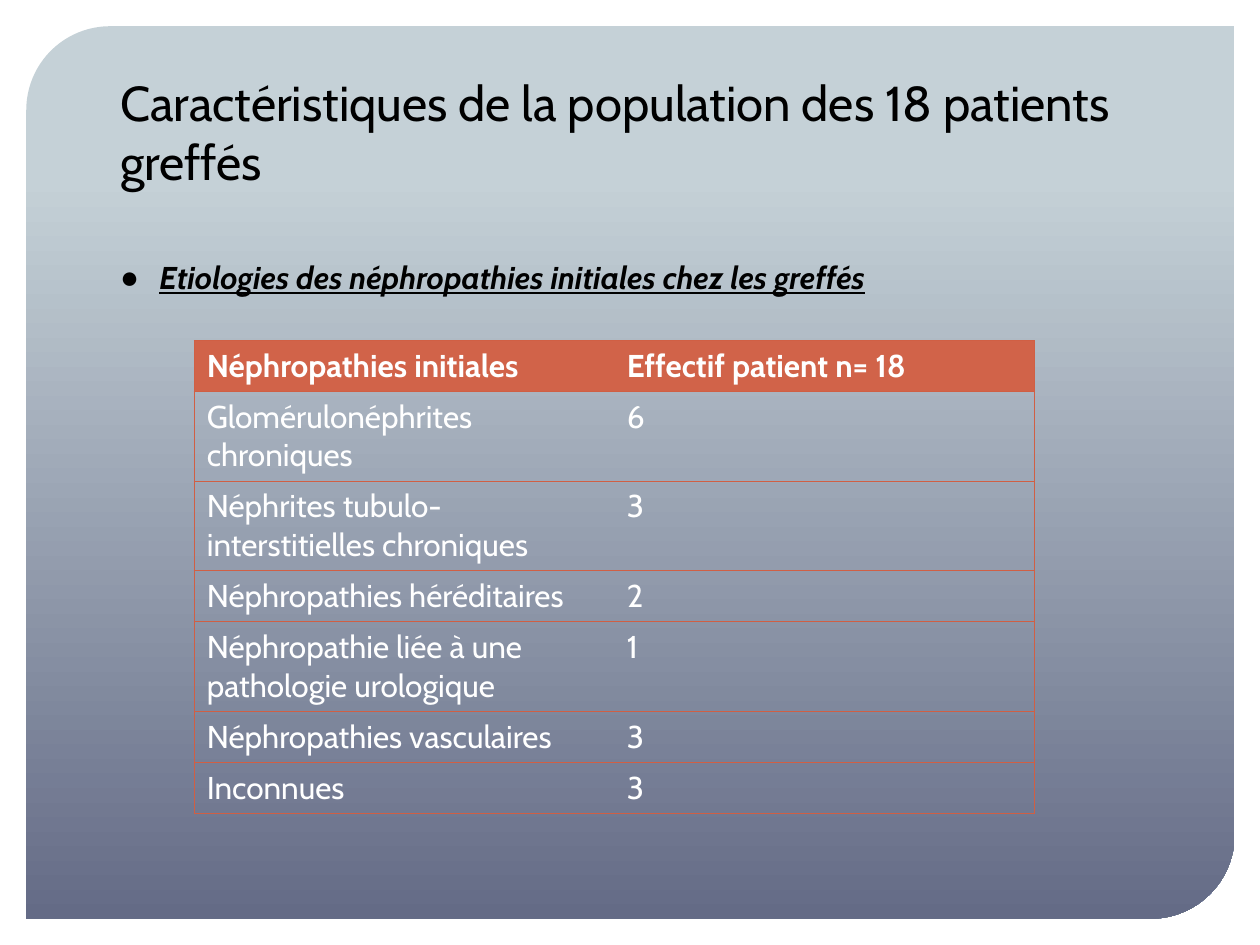
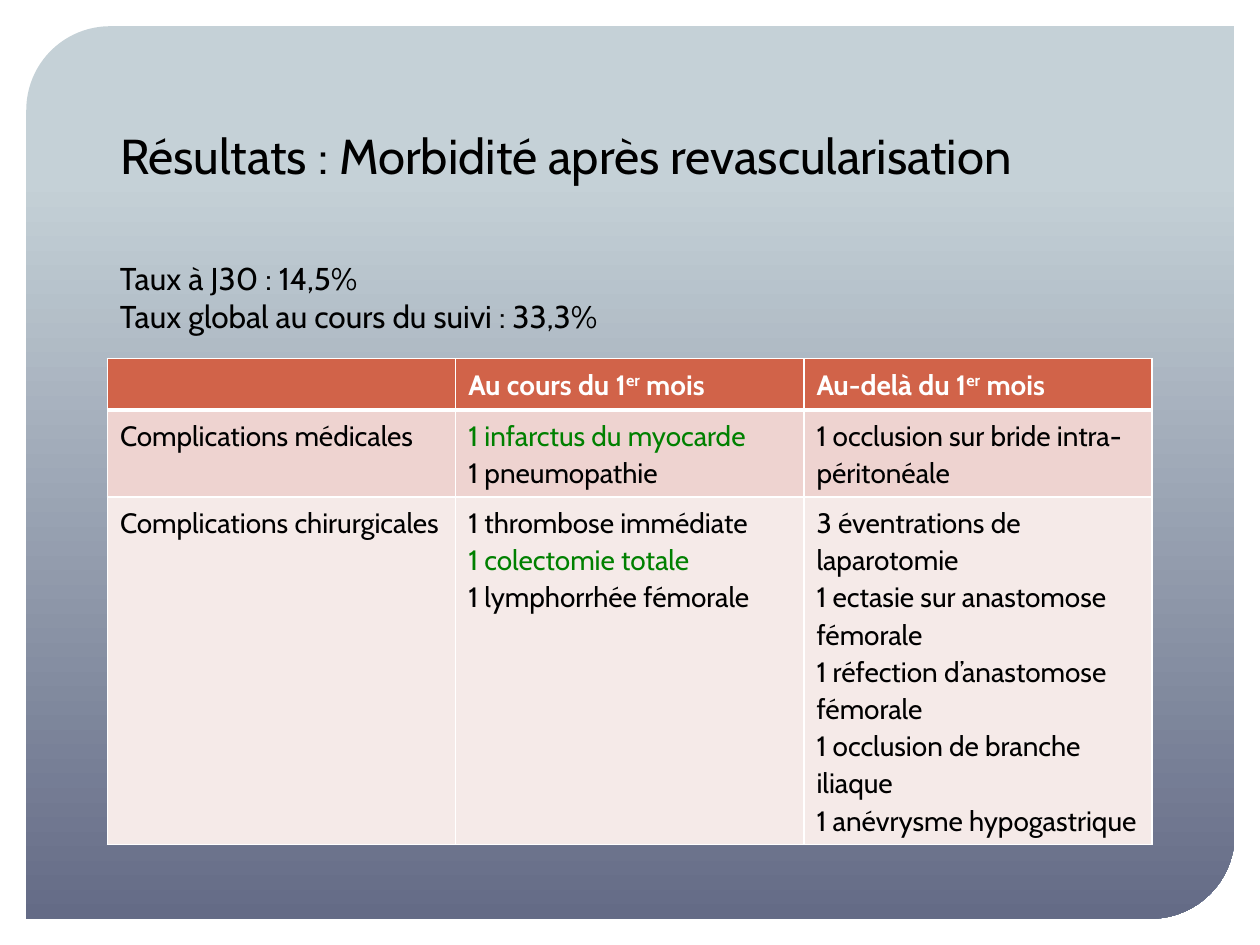
from lxml import etree
from pptx import Presentation
from pptx.dml.color import RGBColor
from pptx.enum import shapes, text
from pptx.oxml import ns
from pptx.util import Pt

FONT = "Cabin"
BLACK, WHITE, GREEN = "000000", "FFFFFF", "008000"
SKY, DUSK = "C5D1D7", "646B86"
RUST, RUST_LINE = "D16349", "D05F44"
ROSE, PALE_ROSE = "EED3D0", "F5EAE8"
LEFT, WIDTH = 61.4, 597
ROW_HEIGHT = 29.2

NEPHROPATHIES = [
    ("Néphropathies initiales", "Effectif patient n= 18"),
    ("Glomérulonéphrites chroniques", "6"),
    ("Néphrites tubulo-interstitielles chroniques", "3"),
    ("Néphropathies héréditaires", "2"),
    ("Néphropathie liée à une pathologie urologique", "1"),
    ("Néphropathies vasculaires", "3"),
    ("Inconnues", "3"),
]

PERIODS = [(), ("Au cours du 1", "er", " mois"), ("Au-delà du 1", "er", " mois")]
COMPLICATIONS = [
    (
        ["Complications médicales"],
        ["1 infarctus du myocarde", "1 pneumopathie"],
        ["1 occlusion sur bride intra-péritonéale"],
    ),
    (
        ["Complications chirurgicales"],
        ["1 thrombose immédiate", "1 colectomie totale", "1 lymphorrhée fémorale"],
        [
            "3 éventrations de laparotomie",
            "1 ectasie sur anastomose fémorale",
            "1 réfection d’anastomose fémorale",
            "1 occlusion de branche iliaque",
            "1 anévrysme hypogastrique",
        ],
    ),
]
HIGHLIGHTED = {"1 infarctus du myocarde", "1 colectomie totale"}


def colour(value):
    return RGBColor.from_string(value)


def place(shape, left, top, width, height):
    shape.left, shape.top = Pt(left), Pt(top)
    shape.width, shape.height = Pt(width), Pt(height)


def add_run(paragraph, words, size, ink=BLACK, bold=False):
    run = paragraph.add_run()
    run.text = words
    run.font.name = FONT
    run.font.size = Pt(size)
    run.font.bold = bold
    run.font.color.rgb = colour(ink)
    return run


def paragraphs_for(frame, count):
    """Give the frame's first paragraph, then new ones, up to count."""
    yield frame.paragraphs[0]
    for _ in range(count - 1):
        yield frame.add_paragraph()


def add_panel(slide):
    """Put the rounded gradient panel behind everything on the slide."""
    panel = slide.shapes.add_shape(
        shapes.MSO_SHAPE.ROUND_2_DIAG_RECTANGLE, Pt(15), Pt(15), Pt(690.5), Pt(510))
    panel.shadow.inherit = False
    panel.adjustments[0], panel.adjustments[1] = 0.094, 0
    panel.line.fill.background()
    panel.fill.gradient()
    panel.fill.gradient_angle = 270
    for stop, position, tint in zip(panel.fill.gradient_stops, (0.17, 1), (SKY, DUSK)):
        stop.position = position
        stop.color.rgb = colour(tint)
    slide.shapes.element.insert(2, panel.element)


def set_title(slide, words, top):
    title = slide.shapes.title
    place(title, LEFT, top, WIDTH, 82)
    title.text_frame.auto_size = text.MSO_AUTO_SIZE.NONE
    title.text_frame.vertical_anchor = text.MSO_ANCHOR.BOTTOM
    paragraph = title.text_frame.paragraphs[0]
    paragraph.alignment = text.PP_ALIGN.LEFT
    add_run(paragraph, words, 28)


def set_bullet_heading(body, words):
    place(body, LEFT, 144, WIDTH, 331.2)
    body.text_frame.auto_size = text.MSO_AUTO_SIZE.NONE
    paragraph = body.text_frame.paragraphs[0]
    properties = paragraph._p.get_or_add_pPr()
    properties.set("marL", str(Pt(22.5)))
    properties.set("indent", str(-Pt(22.5)))
    etree.SubElement(properties, ns.qn("a:buChar")).set("char", "●")
    paragraph.space_before = Pt(0)
    run = add_run(paragraph, words, 18, bold=True)
    run.font.italic = run.font.underline = True


def set_borders(cell, ink, left=0, right=0, top=0, bottom=0):
    """Draw each side at its width in points; zero leaves the side empty."""
    properties = cell._tc.get_or_add_tcPr()
    for side, width in zip("LRTB", (left, right, top, bottom)):
        line = etree.SubElement(properties, ns.qn(f"a:ln{side}"), w=str(Pt(width)))
        if width:
            fill = etree.SubElement(line, ns.qn("a:solidFill"))
            etree.SubElement(fill, ns.qn("a:srgbClr"), val=ink)
        else:
            etree.SubElement(line, ns.qn("a:noFill"))


def fill_cell(cell, tint):
    cell.fill.solid()
    cell.fill.fore_color.rgb = colour(tint)


def add_table(slide, rows, columns, left, top, width):
    table = slide.shapes.add_table(
        rows, columns, Pt(left), Pt(top), Pt(width), Pt(rows * ROW_HEIGHT)).table
    table.horz_banding = False
    return table


def add_nephropathy_table(slide, left, top, width):
    table = add_table(slide, len(NEPHROPATHIES), 2, left, top, width)
    for row, values in enumerate(NEPHROPATHIES):
        for column, value in enumerate(values):
            cell = table.cell(row, column)
            add_run(cell.text_frame.paragraphs[0], value, 18, WHITE, bold=row == 0)
            set_borders(cell, RUST_LINE, left=0.75 * (column == 0),
                        right=0.75 * (column == 1), top=0.75, bottom=0.75)
            if row == 0:
                fill_cell(cell, RUST)
            else:
                cell.fill.background()


def add_complication_table(slide, left, top, width):
    table = add_table(slide, 1 + len(COMPLICATIONS), len(PERIODS), left, top, width)
    for column, parts in enumerate(PERIODS):
        cell = table.cell(0, column)
        paragraph = cell.text_frame.paragraphs[0]
        paragraph.line_spacing = 1.1
        for part in parts:
            run = add_run(paragraph, part, 16, WHITE, bold=True)
            if part == "er":
                run._r.get_or_add_rPr().set("baseline", "30000")
        set_borders(cell, WHITE, 1, 1, 1, 3)
        fill_cell(cell, RUST)
    for row, (cells, tint) in enumerate(zip(COMPLICATIONS, (ROSE, PALE_ROSE)), 1):
        for column, lines in enumerate(cells):
            cell = table.cell(row, column)
            for paragraph, line in zip(paragraphs_for(cell.text_frame, len(lines)), lines):
                paragraph.line_spacing = 1.1
                add_run(paragraph, line, 16, GREEN if line in HIGHLIGHTED else BLACK)
            set_borders(cell, WHITE, 1, 1, 3 if row == 1 else 1, 1)
            fill_cell(cell, tint)


def add_rates(slide, lines, left, top, width, height):
    box = slide.shapes.add_textbox(Pt(left), Pt(top), Pt(width), Pt(height))
    box.text_frame.word_wrap = True
    for paragraph, line in zip(paragraphs_for(box.text_frame, len(lines)), lines):
        add_run(paragraph, line, 18)


def build_population_slide(slide):
    add_panel(slide)
    set_title(slide, "Caractéristiques de la population des 18 patients greffés", 30.2)
    set_bullet_heading(slide.placeholders[1],
                       "Etiologies des néphropathies initiales chez les greffés")
    add_nephropathy_table(slide, 111, 194.6, 480)


def build_morbidity_slide(slide):
    add_panel(slide)
    set_title(slide, "Résultats : Morbidité après revascularisation", 27)
    add_complication_table(slide, LEFT, 205, WIDTH)
    add_rates(slide, ["Taux à J30 : 14,5%", "Taux global au cours du suivi : 33,3%"],
              LEFT, 144.7, WIDTH, 51)


def main():
    presentation = Presentation()
    presentation.slide_width, presentation.slide_height = Pt(720), Pt(540)
    layouts = presentation.slide_layouts
    build_population_slide(
        presentation.slides.add_slide(layouts.get_by_name("Title and Content")))
    build_morbidity_slide(
        presentation.slides.add_slide(layouts.get_by_name("Title Only")))
    presentation.save("out.pptx")


if __name__ == "__main__":
    main()
